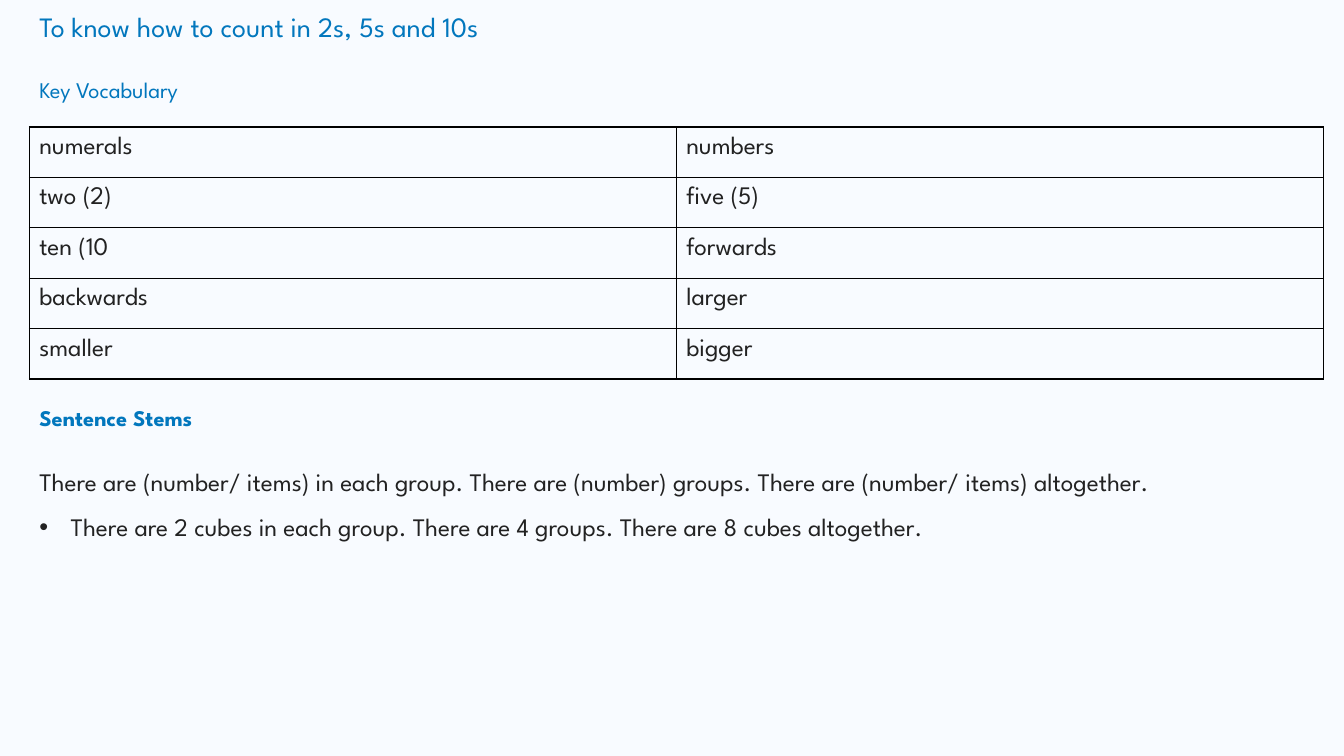
import pptx
import pptx.util
import pptx.dml.color
import pptx.enum.text
import lxml.etree

Cm = pptx.util.Cm
Pt = pptx.util.Pt
FONT = "League Spartan"
BLUE, INK, BLACK, PAPER = "0277BD", "222222", "000000", "F8FBFF"
LEFT, WIDE = 0.74, 32.61
WORDS = [
    ("numerals", "numbers"),
    ("two (2)", "five (5)"),
    ("ten (10", "forwards"),
    ("backwards", "larger"),
    ("smaller", "bigger"),
]
STEMS = [
    ("There are (number/ items) in each group. There are (number) groups. "
     "There are (number/ items) altogether.", False),
    ("There are 2 cubes in each group. There are 4 groups. "
     "There are 8 cubes altogether.", True),
]


def color(code):
    return pptx.dml.color.RGBColor.from_string(code)


def add_xml(parent, tag, **attrs):
    return lxml.etree.SubElement(parent, pptx.oxml.ns.qn(tag), attrs)


def write(para, text, size, code, bold=False):
    para.alignment = pptx.enum.text.PP_ALIGN.LEFT
    para.space_before = para.space_after = Pt(0)
    run = para.add_run()
    run.text = text
    font = run.font
    font.name, font.size, font.bold = FONT, Pt(size), bold
    font.color.rgb = color(code)


def place(shape, box):
    shape.left, shape.top, shape.width, shape.height = map(Cm, box)
    frame = shape.text_frame
    frame.word_wrap = True
    frame.auto_size = pptx.enum.text.MSO_AUTO_SIZE.NONE
    frame.vertical_anchor = pptx.enum.text.MSO_ANCHOR.TOP
    frame.margin_left = frame.margin_right = Cm(0.25)
    frame.margin_top = frame.margin_bottom = Cm(0.13)
    return frame


def add_head(shape, box, text, size, bold=False):
    para = place(shape, box).paragraphs[0]
    para.line_spacing = 1.0
    write(para, text, size, BLUE, bold)


def add_stems(shape, box):
    frame = place(shape, box)
    for index, (text, dot) in enumerate(STEMS):
        para = frame.add_paragraph() if index else frame.paragraphs[0]
        props = para._p.get_or_add_pPr()
        indent = Cm(0.79) if dot else 0
        props.set("marL", str(indent))
        props.set("indent", str(-indent))
        if dot:
            add_xml(props, "a:buFont", typeface="Arial")
            add_xml(props, "a:buChar", char="•")
        else:
            add_xml(props, "a:buNone")
        para.line_spacing = 1.5
        write(para, text, 18, INK)


def add_edges(cell):
    props = cell._tc.get_or_add_tcPr()
    for side in ("a:lnL", "a:lnR", "a:lnT", "a:lnB"):
        line = add_xml(props, side, w=str(Pt(1)))
        fill = add_xml(line, "a:solidFill")
        add_xml(fill, "a:srgbClr", val=BLACK)


def add_words(slide, box):
    left, top, width, height = box
    rows, cols = len(WORDS), len(WORDS[0])
    table = slide.shapes.add_table(rows, cols, *map(Cm, box)).table
    table.first_row = table.horz_banding = False
    for col in table.columns:
        col.width = Cm(width / cols)
    for row, words in zip(table.rows, WORDS):
        row.height = Cm(height / rows)
        for cell, word in zip(row.cells, words):
            cell.margin_left = cell.margin_right = Cm(0.25)
            cell.margin_top = cell.margin_bottom = Cm(0.25)
            add_edges(cell)
            cell.fill.background()
            write(cell.text_frame.paragraphs[0], word, 18, INK)


def main():
    deck = pptx.Presentation()
    deck.slide_width, deck.slide_height = Cm(33.87), Cm(19.05)
    slide = deck.slides.add_slide(deck.slide_layouts.get_by_name("Comparison"))
    fill = slide.background.fill
    fill.solid()
    fill.fore_color.rgb = color(PAPER)
    slots = {slot.placeholder_format.idx: slot for slot in slide.placeholders}
    add_head(slots[0], (LEFT, 0.1, WIDE, 1.12),
             "To know how to count in 2s, 5s and 10s", 20)
    add_head(slots[1], (LEFT, 1.8, 7.54, 1.17), "Key Vocabulary", 16)
    add_head(slots[3], (LEFT, 10.06, 7.54, 1.17), "Sentence Stems", 16, True)
    add_stems(slots[2], (LEFT, 11.23, WIDE, 3.58))
    add_words(slide, (LEFT, 3.2, WIDE, 6.35))
    for idx, slot in slots.items():
        if idx > 3:
            slot.element.getparent().remove(slot.element)
    deck.save("out.pptx")


if __name__ == "__main__":
    main()
